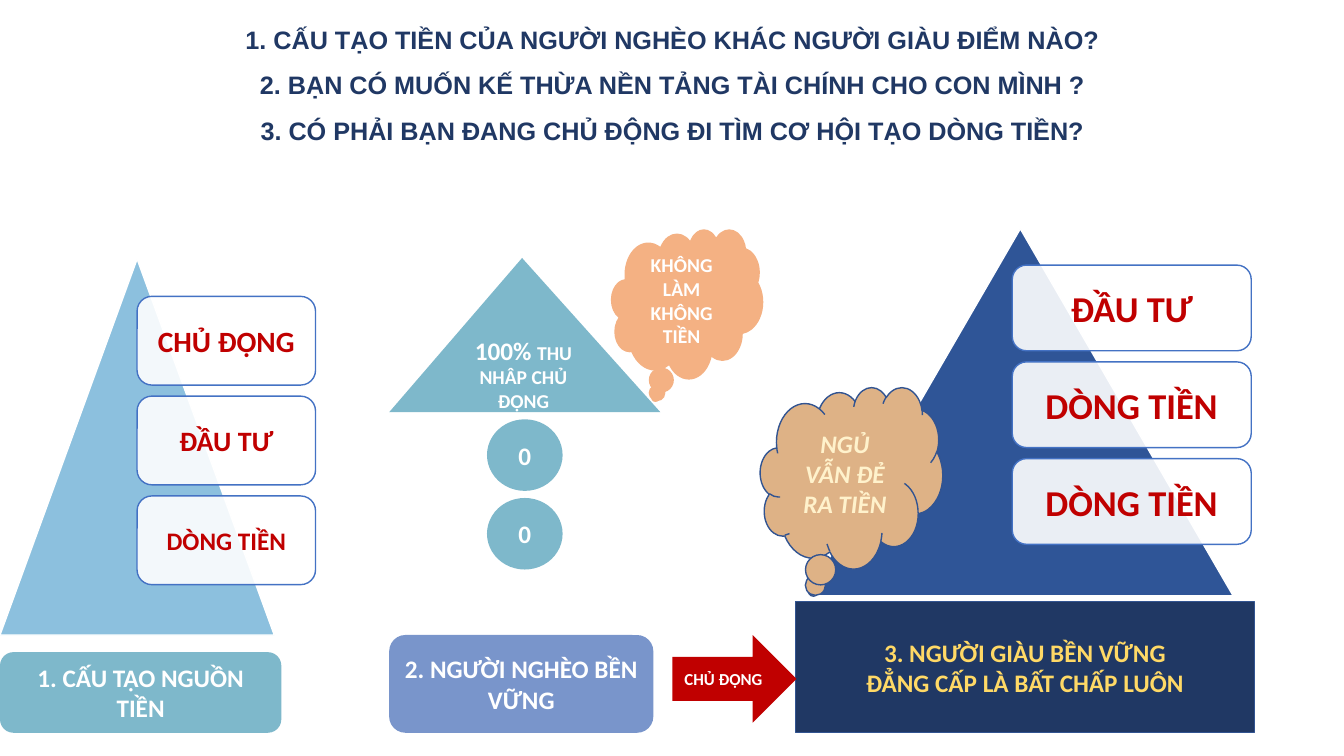
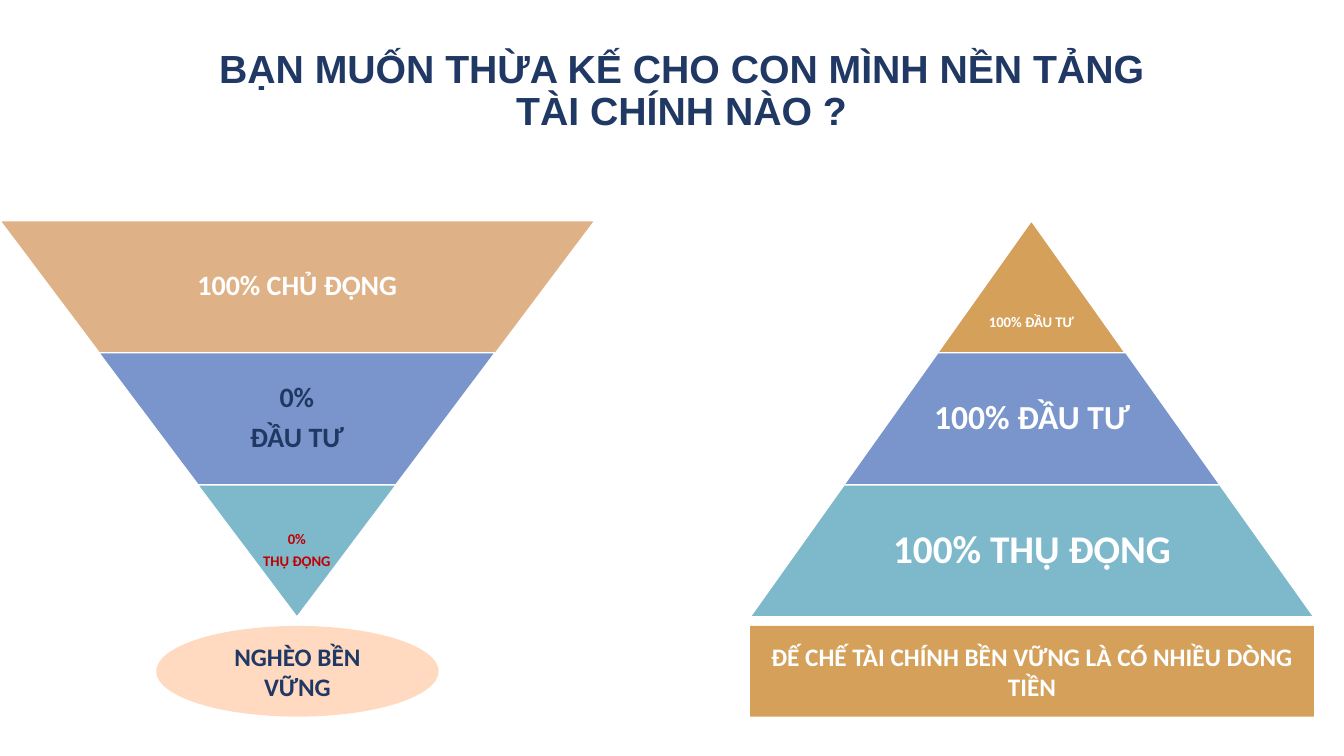
from lxml import etree
from pptx import Presentation
from pptx.dml.color import RGBColor
from pptx.enum.shapes import MSO_SHAPE
from pptx.enum.text import MSO_ANCHOR, MSO_AUTO_SIZE, PP_ALIGN
from pptx.oxml.ns import qn
from pptx.util import Pt

PX = 9144
TITLE_ONLY = 5
CENTER = PP_ALIGN.CENTER
MIDDLE, BOTTOM = MSO_ANCHOR.MIDDLE, MSO_ANCHOR.BOTTOM
NO_AUTOFIT = MSO_AUTO_SIZE.NONE
TRIANGLE, TRAPEZOID = MSO_SHAPE.ISOSCELES_TRIANGLE, MSO_SHAPE.TRAPEZOID
RECT, ROUNDED, OVAL = MSO_SHAPE.RECTANGLE, MSO_SHAPE.ROUNDED_RECTANGLE, MSO_SHAPE.OVAL
CLOUD, ARROW = MSO_SHAPE.CLOUD_CALLOUT, MSO_SHAPE.RIGHT_ARROW

COLORS = {
    "white": "FFFFFF", "navy": "203864", "blue": "2F5597", "sky": "8CC0DE",
    "teal": "7EB8CB", "periwinkle": "7995CB", "card_edge": "4472C4",
    "dark_edge": "325491", "red": "C00000", "peach": "F4B183", "tan": "DEB286",
    "blush": "FFD9C0", "ochre": "D4A05A", "gold": "FFD966", "cream": "FFF2CC",
}


def rgb(name):
    """Return the named palette colour."""
    return RGBColor.from_string(COLORS[name])


def px(*lengths):
    """Turn px lengths into EMU."""
    return [length * PX for length in lengths]


def write(frame, text, size, color, face="Calibri", spacing=1.0, after=0, italic=False):
    """Fill a text frame with bold centred paragraphs, one per line of text."""
    frame.word_wrap = True
    frame.text = text
    for paragraph in frame.paragraphs:
        paragraph.alignment = CENTER
        paragraph.line_spacing = spacing
        paragraph.space_before = Pt(0)
        paragraph.space_after = Pt(after)
        font = paragraph.font
        font.name, font.size, font.bold, font.italic = face, Pt(size), True, italic
        font.color.rgb = rgb(color)


def add_title_slide(prs, text, box, size, spacing):
    """Add a slide whose title sits at the bottom of the given box."""
    slide = prs.slides.add_slide(prs.slide_layouts[TITLE_ONLY])
    title = slide.shapes.title
    title.left, title.top, title.width, title.height = px(*box)
    frame = title.text_frame
    frame.auto_size, frame.vertical_anchor = NO_AUTOFIT, BOTTOM
    write(frame, text, size, "navy", face="Arial", spacing=spacing)
    return slide


def add_block(slide, kind, box, fill, text="", size=18, color="white", edge=None, italic=False):
    """Add a flat preset shape with an optional outline and label."""
    block = slide.shapes.add_shape(kind, *px(*box))
    block.shadow.inherit = False
    block.fill.solid()
    block.fill.fore_color.rgb = rgb(fill)
    if edge:
        block.line.color.rgb = rgb(edge)
        block.line.width = Pt(1)
    else:
        block.line.fill.background()
    if text:
        block.text_frame.vertical_anchor = MIDDLE
        write(block.text_frame, text, size, color, italic=italic)
    return block


def add_card_pyramid(slide, box, fill, card_left, card_width, cards):
    """Add a triangle overlaid by a column of translucent cards."""
    add_block(slide, TRIANGLE, box, fill, edge="white")
    top, height = box[1], box[3]
    step = round(height * 0.265)
    for row, (text, size) in enumerate(cards):
        card_box = (card_left, top + height // 10 + row * step, card_width, round(step * 8 / 9))
        card = add_block(slide, ROUNDED, card_box, "white", text, size, "red", "card_edge")
        solid_fill = card.element.spPr.find(qn("a:solidFill"))
        etree.SubElement(solid_fill[0], qn("a:alpha"), val="90000")


def add_layered_pyramid(slide, left, width, layers, inverted=False):
    """Stack equal-height layers, each with its label, into a pyramid."""
    top, height, count = 219, 131, len(layers)
    for row, (text, size, color, fill, drop) in enumerate(layers):
        share = count - row if inverted else row + 1
        layer_width = round(width * share / count)
        layer_left = left + (width - layer_width) // 2
        layer_top = top + row * height
        layer = add_block(slide, TRAPEZOID, (layer_left, layer_top, layer_width, height),
                          fill, edge="white")
        layer.adjustments[0] = width / (2 * count) / height
        layer.rotation = 180 if inverted else 0
        label = slide.shapes.add_textbox(*px(layer_left, layer_top + drop, layer_width, height))
        frame = label.text_frame
        frame.vertical_anchor = MIDDLE
        frame.margin_left = frame.margin_right = frame.margin_top = frame.margin_bottom = 3 * PX
        write(frame, text, size, color, spacing=0.9, after=round(size * 0.35))


def build_comparison(prs):
    """Build the slide comparing the money structures of poor and rich."""
    questions = ("1. CẤU TẠO TIỀN CỦA NGƯỜI NGHÈO KHÁC NGƯỜI GIÀU ĐIỂM NÀO?\n"
                 "2. BẠN CÓ MUỐN KẾ THỪA NỀN TẢNG TÀI CHÍNH CHO CON MÌNH ?\n"
                 "3. CÓ PHẢI BẠN ĐANG CHỦ ĐỘNG ĐI TÌM CƠ HỘI TẠO DÒNG TIỀN?")
    slide = add_title_slide(prs, questions, (167, 0, 1000, 149), 18, 1.5)

    add_card_pyramid(slide, (0, 257, 272, 373), "sky", 136, 177,
                     [("CHỦ ĐỘNG", 21), ("ĐẦU TƯ", 20), ("DÒNG TIỀN", 18)])
    add_block(slide, ROUNDED, (0, 647, 279, 80), "teal", "1. CẤU TẠO NGUỒN TIỀN")

    active_income = add_block(slide, TRIANGLE, (386, 256, 269, 153), "teal", "100% ")
    active_income.adjustments[0] = 0.49
    income_note = active_income.text_frame.paragraphs[0].add_run()
    income_note.text = "THU NHÂP CHỦ ĐỘNG"
    income_note.font.size = Pt(14)
    for top in (416, 494):
        add_block(slide, OVAL, (483, top, 75, 71), "teal", "0")
    add_block(slide, ROUNDED, (386, 630, 262, 97), "periwinkle", "2. NGƯỜI NGHÈO BỀN VỮNG")

    add_card_pyramid(slide, (801, 227, 422, 364), "blue", 1004, 237,
                     [("ĐẦU TƯ", 26), ("DÒNG TIỀN", 26), ("DÒNG TIỀN", 26)])
    add_block(slide, RECT, (789, 597, 455, 130), "navy",
              "3. NGƯỜI GIÀU BỀN VỮNG\nĐẲNG CẤP LÀ BẤT CHẤP LUÔN", 18, "gold", "dark_edge")

    add_block(slide, CLOUD, (606, 227, 151, 149), "peach", "KHÔNG LÀM KHÔNG TIỀN", 14)
    add_block(slide, CLOUD, (754, 384, 181, 180), "tan", "NGỦ VẪN ĐẺ RA TIỀN", 18, "cream",
              "dark_edge", italic=True)
    add_block(slide, ARROW, (667, 630, 123, 87), "red", "CHỦ ĐỘNG", 12)


def build_inheritance(prs):
    """Build the slide asking which foundation to pass on."""
    slide = add_title_slide(prs, "BẠN MUỐN THỪA KẾ CHO CON MÌNH NỀN TẢNG TÀI CHÍNH NÀO ?",
                            (176, 44, 1000, 94), 28, 0.9)
    add_layered_pyramid(slide, 0, 590, [
        ("100% CHỦ ĐỘNG", 20, "white", "tan", 0),
        ("0%\nĐẦU TƯ", 20, "navy", "periwinkle", 0),
        ("0%\nTHỤ ĐỘNG", 10.5, "red", "teal", 0),
    ], inverted=True)
    add_block(slide, OVAL, (155, 621, 280, 90), "blush", "NGHÈO BỀN VỮNG", 18, "navy")

    add_layered_pyramid(slide, 744, 559, [
        ("100% ĐẦU TƯ", 10.5, "white", "ochre", 36),
        ("100% ĐẦU TƯ", 24, "white", "periwinkle", 0),
        ("100% THỤ ĐỘNG", 28, "white", "teal", 0),
    ])
    add_block(slide, RECT, (744, 621, 559, 90), "ochre",
              "ĐẾ CHẾ TÀI CHÍNH BỀN VỮNG LÀ CÓ NHIỀU DÒNG TIỀN")


def main():
    """Build and save the presentation."""
    prs = Presentation()
    prs.slide_width, prs.slide_height = px(1333, 750)
    build_comparison(prs)
    build_inheritance(prs)
    prs.save("out.pptx")


if __name__ == "__main__":
    main()
